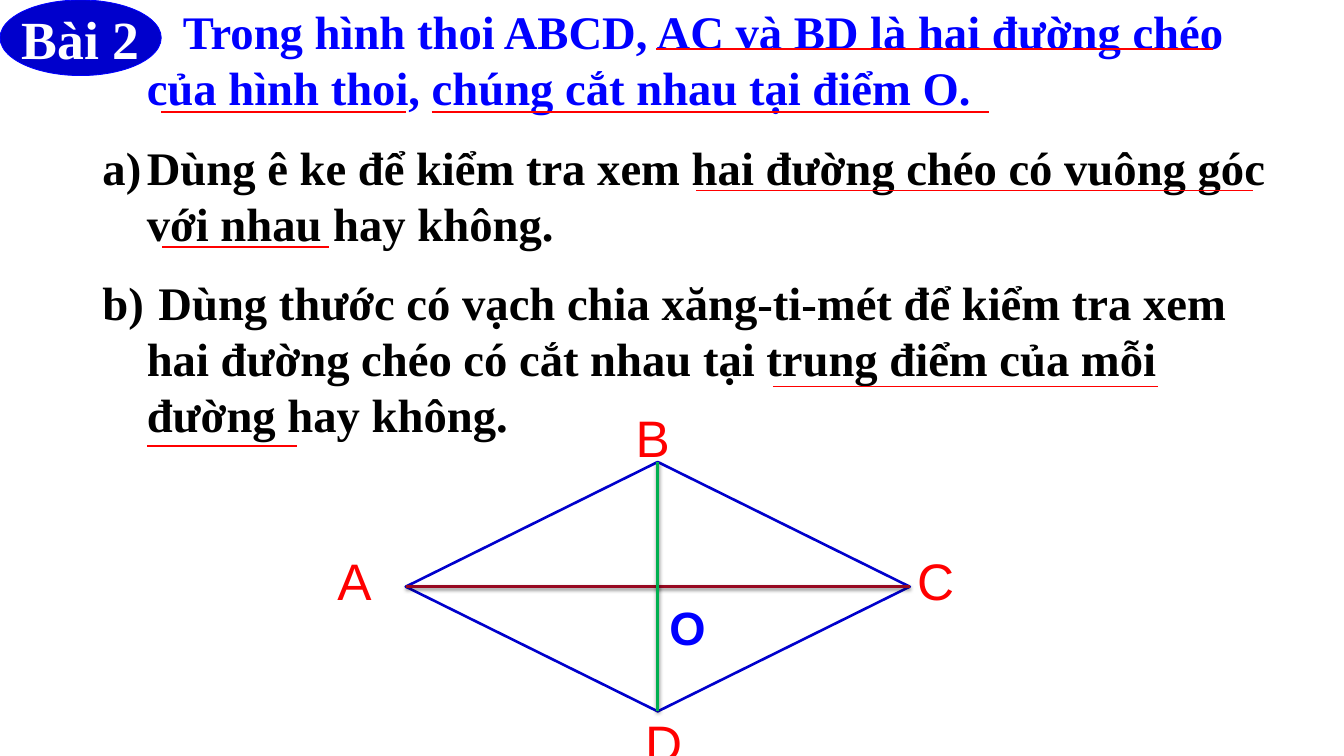
import lxml.etree
import pptx
import pptx.dml.color
import pptx.enum.shapes
import pptx.enum.text
import pptx.oxml
import pptx.oxml.ns
import pptx.util

Pt = pptx.util.Pt
RGBColor = pptx.dml.color.RGBColor
Shape = pptx.enum.shapes.MSO_SHAPE
Connector = pptx.enum.shapes.MSO_CONNECTOR
Align = pptx.enum.text.PP_ALIGN
Anchor = pptx.enum.text.MSO_ANCHOR
qn = pptx.oxml.ns.qn

BLUE = RGBColor(0x00, 0x00, 0xFF)
NAVY = RGBColor(0x00, 0x00, 0xCC)
RED = RGBColor(0xFF, 0x00, 0x00)
MAROON = RGBColor(0x97, 0x09, 0x21)
GREEN = RGBColor(0x00, 0xB0, 0x50)
BLACK = RGBColor(0x00, 0x00, 0x00)
WHITE = RGBColor(0xFF, 0xFF, 0xFF)

SERIF = "Times New Roman"
SANS = "Arial"


def apply(target, values):
    for name, value in values.items():
        setattr(target, name, value)


class Lesson:
    def __init__(self, deck):
        self.page = deck.slides.add_slide(deck.slide_layouts[6])

    def frame(self, box, insets, wrap=True, anchor=Anchor.TOP):
        left, top, right, bottom = map(Pt, insets)
        apply(box.text_frame, dict(margin_left=left, margin_top=top, margin_right=right,
                                   margin_bottom=bottom, word_wrap=wrap, vertical_anchor=anchor))
        return box.text_frame

    def add_span(self, para, text, font, size, color, bold):
        span = para.add_run()
        span.text = text
        apply(span.font, dict(name=font, size=Pt(size), bold=bold))
        span.font.color.rgb = color

    def shape(self, kind, place, fill, line, weight):
        shape = self.page.shapes.add_shape(kind, *map(Pt, place))
        shape.shadow.inherit = False
        if fill is None:
            shape.fill.background()
        else:
            shape.fill.solid()
            shape.fill.fore_color.rgb = fill
        shape.line.color.rgb = line
        shape.line.width = Pt(weight)
        return shape

    def badge(self, place, text):
        oval = self.shape(Shape.OVAL, place, NAVY, BLUE, 0.75)
        para = self.frame(oval, (10, 5, 10, 5), False, Anchor.MIDDLE).paragraphs[0]
        para.alignment = Align.CENTER
        self.add_span(para, text, SERIF, 46, WHITE, True)

    def label(self, place, text, size=44, color=RED, bold=False, insets=(7.2, 8, 7.2, 3.6)):
        box = self.page.shapes.add_textbox(*map(Pt, place))
        para = self.frame(box, insets).paragraphs[0]
        self.add_span(para, text, SANS, size, color, bold)

    def exercise(self, place, intro, questions):
        box = self.page.shapes.add_textbox(*map(Pt, place))
        frame = self.frame(box, (10, 7, 10, 5))
        for index, text in enumerate([intro, *questions]):
            para = frame.add_paragraph() if index else frame.paragraphs[0]
            apply(para, dict(line_spacing=Pt(48), space_before=Pt(20 if index else 0)))
            layout = para._p.get_or_add_pPr()
            layout.set("marL", str(Pt(38)))
            layout.set("indent", str(Pt(-38 if index else 31)))
            if index:
                bullet = lxml.etree.SubElement(layout, qn("a:buAutoNum"))
                bullet.set("type", "alphaLcParenR")
            self.add_span(para, text, SERIF, 40, BLACK if index else BLUE, True)

    def line(self, start, end, color, weight, shadow=False):
        line = self.page.shapes.add_connector(Connector.STRAIGHT, *map(Pt, (*start, *end)))
        line.line.color.rgb = color
        line.line.width = Pt(weight)
        effects = lxml.etree.SubElement(line._element.spPr, qn("a:effectLst"))
        if shadow:
            effects.append(pptx.oxml.parse_xml(
                f'<a:outerShdw {pptx.oxml.ns.nsdecls("a")} blurRad="{Pt(3.1)}" dist="{Pt(1.6)}" '
                'dir="5400000" rotWithShape="0"><a:srgbClr val="000000">'
                '<a:alpha val="38000"/></a:srgbClr></a:outerShdw>'))
        return line

    def underline(self, left, right, height):
        self.line((left, height), (right, height), RED, 1.5)

    def rhombus(self, left, top, width, height):
        rhombus = self.shape(Shape.DIAMOND, (left, top, width, height), None, NAVY, 2.25)
        center = (left + width / 2, top + height / 2)
        halves = [
            (1, (left, center[1]), MAROON),
            (3, (left + width, center[1]), MAROON),
            (0, (center[0], top), GREEN),
            (2, (center[0], top + height), GREEN),
        ]
        for site, vertex, color in halves:
            half = self.line(vertex, center, color, 3, True)
            half.begin_connect(rhombus, site)


def main():
    deck = pptx.Presentation()
    apply(deck, dict(slide_width=Pt(1152), slide_height=Pt(648)))
    lesson = Lesson(deck)
    lesson.exercise(
        (77.8, -4.3, 1038.2, 398.2),
        "Trong hình thoi ABCD, AC và BD là hai đường chéo của hình thoi, "
        "chúng cắt nhau tại điểm O.",
        ["Dùng ê ke để kiểm tra xem hai đường chéo có vuông góc với nhau hay không.",
         " Dùng thước có vạch chia xăng-ti-mét để kiểm tra xem hai đường chéo "
         "có cắt nhau tại trung điểm của mỗi đường hay không."])
    lesson.badge((0, 0, 138.2, 64.8), "Bài 2")
    for left, right, height in [
        (562.3, 1039.7, 41.8), (138.2, 347.8, 95.8), (370, 847.4, 95.8),
        (597, 1074.2, 163.4), (139, 282.2, 211.7),
        (662.4, 992.2, 331.2), (126, 254.2, 382.3),
    ]:
        lesson.underline(left, right, height)
    lesson.rhombus(347.8, 396, 432, 213.8)
    for name, left, top in [("A", 282.2, 463), ("C", 779, 463),
                            ("B", 537.8, 340.6), ("D", 545.8, 601.2)]:
        lesson.label((left, top, 50.4, 60.5), name)
    lesson.label((563.8, 504, 37.4, 59), "O", 40, BLUE, True, (10, 9, 10, 5))
    deck.save("out.pptx")


if __name__ == "__main__":
    main()
